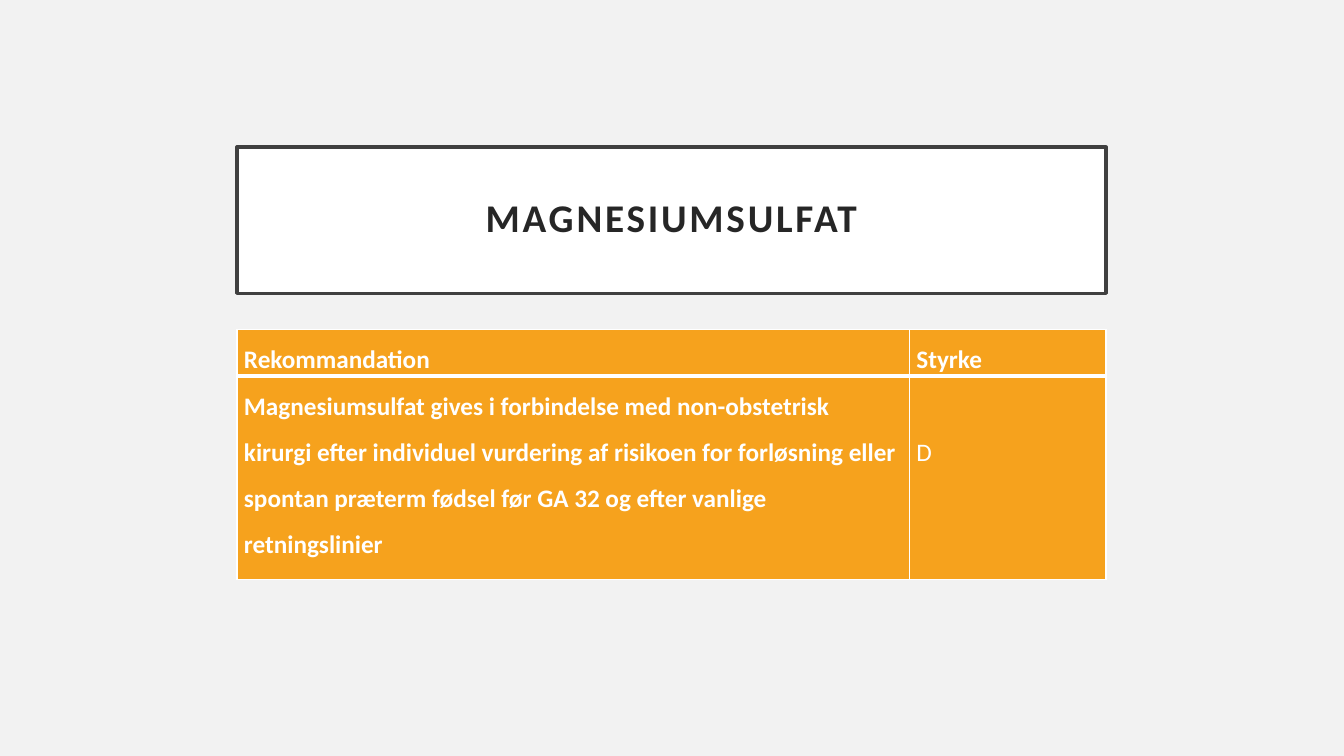
from lxml.etree import SubElement
from pptx import Presentation
from pptx.dml.color import RGBColor
from pptx.enum.text import MSO_ANCHOR, PP_ALIGN
from pptx.oxml.ns import qn
from pptx.util import Inches, Pt

WHITE, ORANGE, DARK, FRAME, PAPER = "FFFFFF", "F6A21D", "262626", "404040", "F2F2F2"
LEFT, WIDTH = 2.35, 8.62
ROWS = [
    ("Rekommandation", "Styrke"),
    ("Magnesiumsulfat gives i forbindelse med non-obstetrisk kirurgi efter "
     "individuel vurdering af risikoen for forløsning eller spontan præterm "
     "fødsel før GA 32 og efter vanlige retningslinier", "D"),
]
LINE = 0.46  # height of one table text line


def paint(fmt, color):
    fmt.solid()
    fmt.fore_color.rgb = RGBColor.from_string(color)


def write(para, text, size, color, bold, spacing):
    para.line_spacing = spacing
    run = para.add_run()
    run.text = text
    font = run.font
    font.name, font.size, font.bold = "Calibri", Pt(size), bold
    paint(font.fill, color)
    return run


def add_title(slide, x, y, w, h):
    title = slide.shapes.title
    title.left, title.top = Inches(x), Inches(y)
    title.width, title.height = Inches(w), Inches(h)
    paint(title.fill, WHITE)
    paint(title.line.fill, FRAME)
    title.line.width = Pt(2.5)
    frame = title.text_frame
    frame.word_wrap = True
    frame.vertical_anchor = MSO_ANCHOR.MIDDLE
    frame.margin_left = frame.margin_right = Inches(0.2)
    frame.margin_top = frame.margin_bottom = Inches(0.2)
    para = frame.paragraphs[0]
    para.alignment = PP_ALIGN.CENTER
    run = write(para, "MAGNESIUMSULFAT", 28, DARK, True, 0.9)
    run.font._element.set("spc", "200")


def add_edges(cell, widths):
    """Draw white borders, widths in points by side; must precede the cell fill."""
    props = cell._tc.get_or_add_tcPr()
    for side, width in widths.items():
        edge = SubElement(props, qn(f"a:ln{side}"), w=str(Pt(width)))
        fill = SubElement(edge, qn("a:solidFill"))
        SubElement(fill, qn("a:srgbClr"), val=WHITE)


def add_grid(slide, x, y, w, h):
    table = slide.shapes.add_table(
        2, 2, Inches(x), Inches(y), Inches(w), Inches(h)).table
    for col, size in zip(table.columns, (6.67, w - 6.67)):
        col.width = Inches(size)
    for row, size in zip(table.rows, (LINE, h - LINE)):
        row.height = Inches(size)
    for r, texts in enumerate(ROWS):
        for c, text in enumerate(texts):
            cell = table.cell(r, c)
            grade = r == 1 and c == 1
            cell.margin_left = cell.margin_right = Inches(0.07)
            cell.margin_top = Inches(LINE if grade else 0)
            cell.margin_bottom = 0
            add_edges(cell, {"L": 1, "R": 1, "T": 3 if r else 1, "B": 1 if r else 3})
            paint(cell.fill, ORANGE)
            write(cell.text_frame.paragraphs[0], text, 18, WHITE, not grade, 1.5)


def main():
    deck = Presentation()
    deck.slide_width, deck.slide_height = Inches(13.33), Inches(7.5)
    slide = deck.slides.add_slide(deck.slide_layouts[5])
    paint(slide.background.fill, PAPER)
    add_title(slide, LEFT, 1.46, WIDTH, 1.45)
    add_grid(slide, LEFT, 3.27, WIDTH, 2.48)
    deck.save("out.pptx")


if __name__ == "__main__":
    main()
